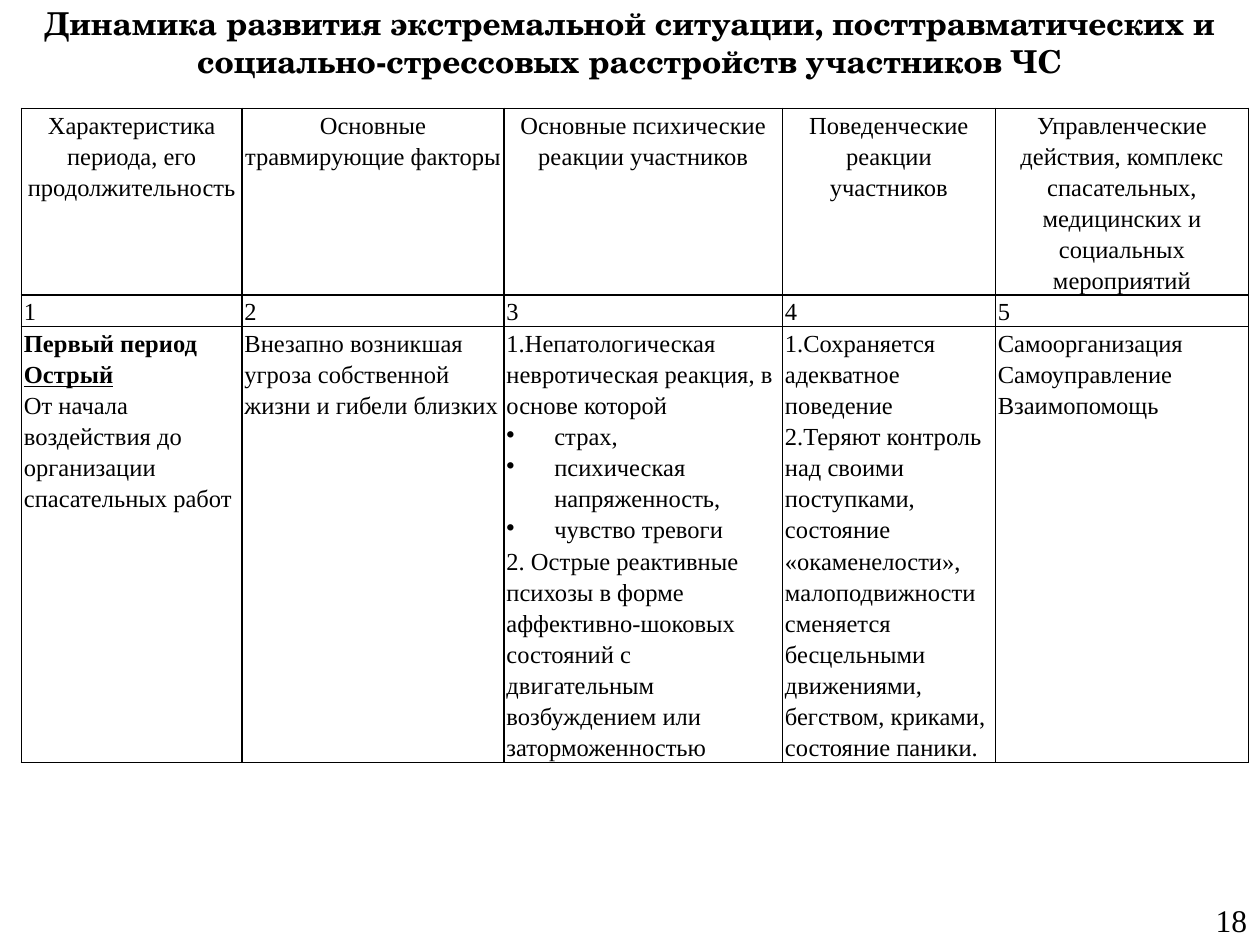
from lxml import etree
from pptx import Presentation
from pptx.dml.color import RGBColor
from pptx.enum.text import MSO_ANCHOR, MSO_AUTO_SIZE, PP_ALIGN
from pptx.oxml import parse_xml
from pptx.oxml.ns import nsdecls, qn
from pptx.util import Inches, Pt

LEFT, MID, JUST = PP_ALIGN.LEFT, PP_ALIGN.CENTER, PP_ALIGN.JUSTIFY
CENTER, TOP = MSO_ANCHOR.MIDDLE, MSO_ANCHOR.TOP
FIXED, GROW = MSO_AUTO_SIZE.NONE, MSO_AUTO_SIZE.SHAPE_TO_FIT_TEXT
BLACK = "000000"
SERIF = "Times New Roman"


def style(font, **form):
    base = {"name": SERIF, "size": Pt(14), "bold": False}
    for key, val in {**base, **form}.items():
        setattr(font, key, val)
    font.color.rgb = RGBColor.from_string(BLACK)


def border(cell):
    props = cell._tc.get_or_add_tcPr()
    for spot, side in enumerate(("lnL", "lnR", "lnT", "lnB")):
        line = parse_xml(
            f'<a:{side} {nsdecls("a")} w="12700"><a:solidFill>'
            f'<a:srgbClr val="{BLACK}"/></a:solidFill></a:{side}>')
        props.insert(spot, line)


heads = [
    "Характеристика периода, его продолжительность",
    "Основные травмирующие факторы",
    "Основные психические реакции участников",
    "Поведенческие реакции участников",
    "Управленческие действия, комплекс спасательных, медицинских и "
    "социальных мероприятий",
]
body = [
    ["Первый период", "Острый", "От начала",
     "воздействия до организации спасательных работ"],
    ["Внезапно возникшая угроза собственной жизни и гибели близких"],
    ["1.Непатологическая невротическая реакция, в основе которой",
     "• страх,", "• психическая напряженность,", "• чувство тревоги",
     "2. Острые реактивные психозы в форме аффективно-шоковых состояний "
     "с двигательным возбуждением или заторможенностью"],
    ["1.Сохраняется адекватное поведение",
     "2.Теряют контроль над своими поступками, состояние «окаменелости», "
     "малоподвижности сменяется бесцельными движениями, бегством, "
     "криками, состояние паники."],
    ["Самоорганизация", "Самоуправление", "Взаимопомощь"],
]
rows = [
    (1.48, MID, [[head] for head in heads]),
    (0.25, JUST, [[str(num)] for num in range(1, 6)]),
    (3.46, LEFT, body),
]
widths = [1.75, 2.08, 2.21, 1.69, 2.01]
marks = {
    "Первый период": {"bold": True},
    "Острый": {"bold": True, "underline": True},
}

prs = Presentation()
prs.slide_width, prs.slide_height = Inches(10), Inches(7.5)
slide = prs.slides.add_slide(prs.slide_layouts[5])

title = slide.shapes.title
place = {"left": 0, "top": 0, "width": Inches(10), "height": Inches(0.67)}
for key, val in place.items():
    setattr(title, key, val)
frame = title.text_frame
frame.text = ("Динамика развития экстремальной ситуации, посттравматических "
              "и социально-стрессовых расстройств участников ЧС")
for key, val in {"auto_size": FIXED, "word_wrap": True,
                 "vertical_anchor": CENTER}.items():
    setattr(frame, key, val)
para = frame.paragraphs[0]
para.alignment = MID
style(para.runs[0].font, name="TeX Gyre Schola", size=Pt(18), bold=True)

table = slide.shapes.add_table(
    len(rows), len(widths), Inches(0.17), Inches(0.86),
    Inches(sum(widths)), Inches(sum(row[0] for row in rows))).table
table.first_row = table.horz_banding = False
for col, width in zip(table.columns, widths):
    col.width = Inches(width)

inset = {"margin_left": Inches(0.02), "margin_right": Inches(0.02),
         "margin_top": 0, "margin_bottom": 0, "vertical_anchor": TOP}
for row, (height, align, texts) in zip(table.rows, rows):
    row.height = Inches(height)
    for cell, lines in zip(row.cells, texts):
        for key, val in inset.items():
            setattr(cell, key, val)
        cell.fill.background()
        border(cell)
        cell.text = "\n".join(line.removeprefix("• ") for line in lines)
        for para, line in zip(cell.text_frame.paragraphs, lines):
            para.alignment = align
            para.line_spacing = 1.15
            style(para.runs[0].font, **marks.get(line, {}))
            if line.startswith("•"):
                props = para._p.get_or_add_pPr()
                props.set("marL", str(Inches(0.38)))
                props.set("indent", str(-Inches(0.38)))
                etree.SubElement(props, qn("a:buChar")).set("char", "•")

box = slide.shapes.add_textbox(
    Inches(9.55), Inches(7.1), Inches(0.45), Inches(0.4))
frame = box.text_frame
frame.text = "18"
frame.word_wrap = False
frame.auto_size = GROW
style(frame.paragraphs[0].runs[0].font, size=Pt(18))

prs.save("out.pptx")
